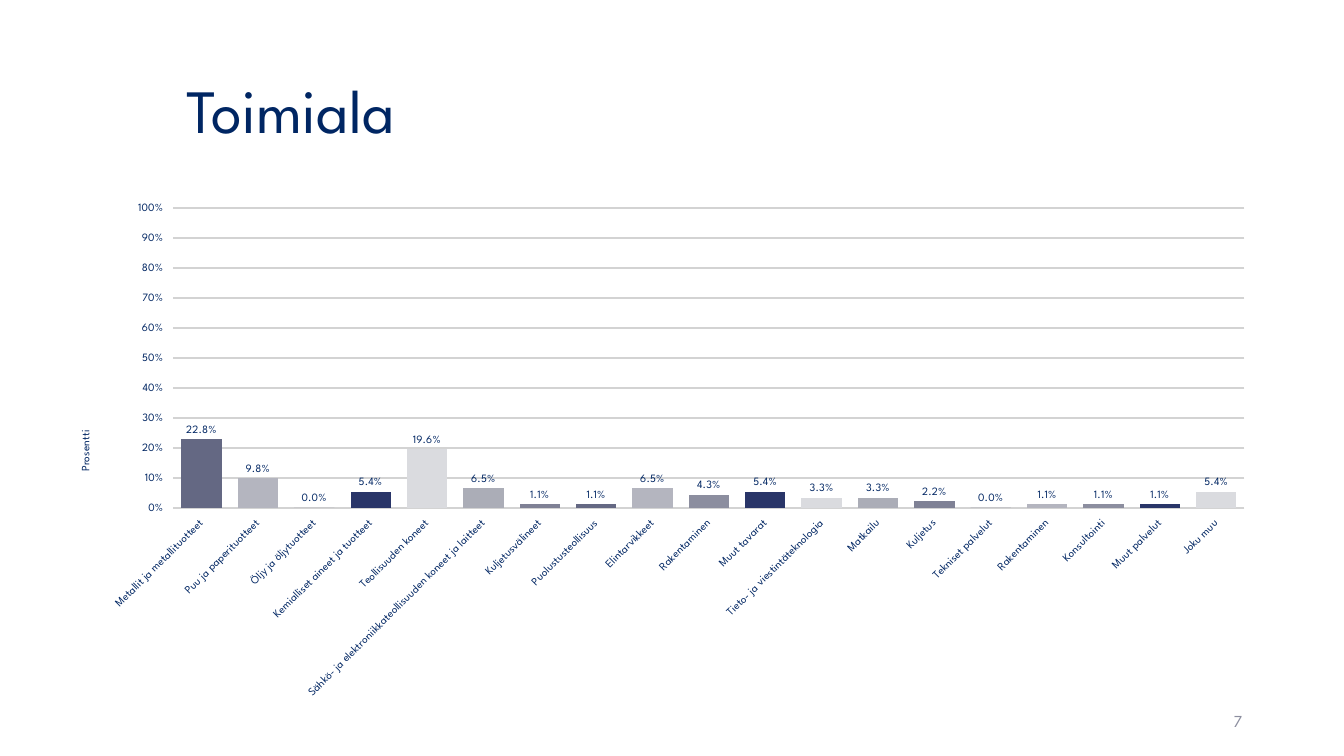
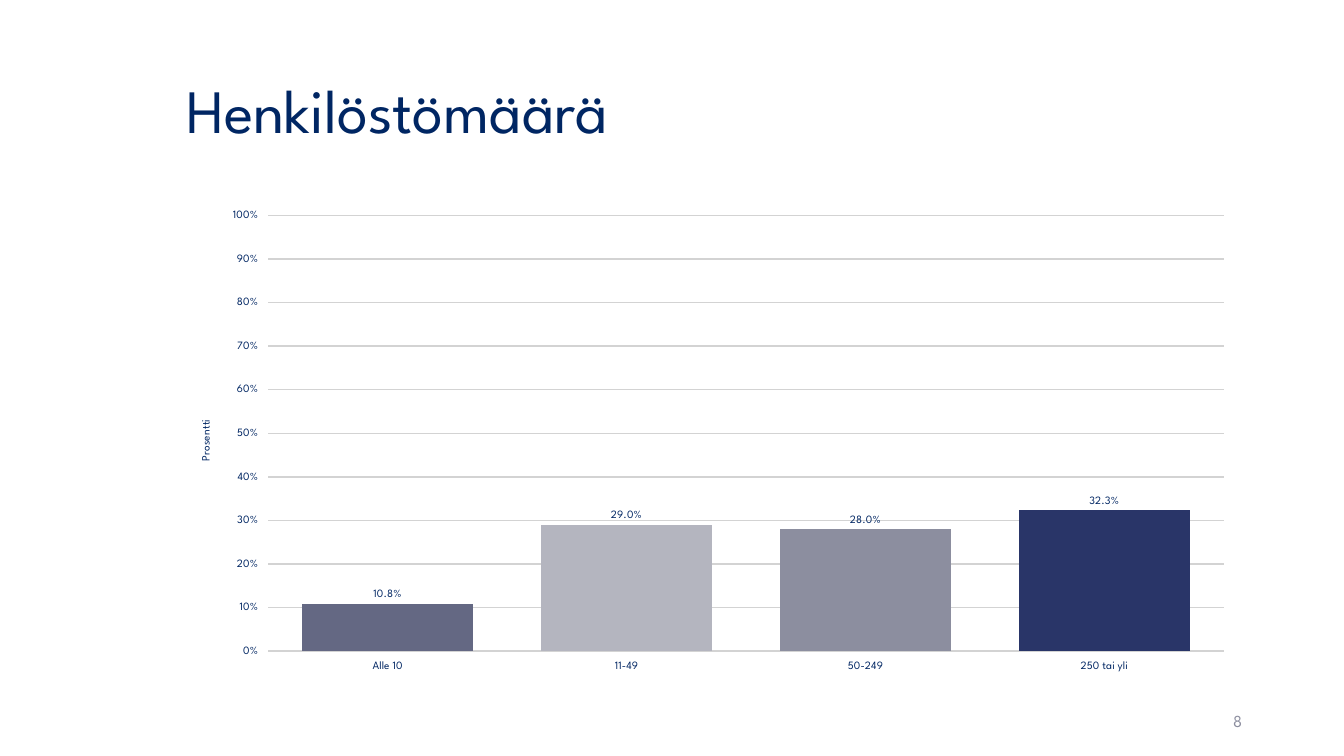
from lxml import etree
from pptx import Presentation
from pptx.chart.data import CategoryChartData
from pptx.dml.color import RGBColor
from pptx.enum.chart import XL_CHART_TYPE, XL_LABEL_POSITION, XL_TICK_MARK
from pptx.enum.text import MSO_ANCHOR, PP_ALIGN
from pptx.oxml.ns import qn
from pptx.util import Inches, Pt

COLUMNS = XL_CHART_TYPE.COLUMN_CLUSTERED
OUTSIDE_END = XL_LABEL_POSITION.OUTSIDE_END
TICK_OUT = XL_TICK_MARK.OUTSIDE
MIDDLE = MSO_ANCHOR.MIDDLE
LEFT, RIGHT = PP_ALIGN.LEFT, PP_ALIGN.RIGHT

FONT = "League Spartan"
NAVY, GREY, GRID = "002663", "8C8E9F", "D3D3D3"
BAR_COLORS = ["646883", "B4B5BF", "8C8E9F", "293568", "DADBDF", "ABADB7", "7F8195"]
TITLE_BOX = (1.75, 0.4, 10.59, 1.45)
NUMBER_BOX = (9.42, 6.95, 3, 0.4)

# Plot and axis title places are shares of the chart box
SLIDES = [
    dict(title="Toimiala", number="7", box=(0.77, 2, 11.58, 5.35),
         plot=dict(x=0.082, y=0.012, w=0.918, h=0.556),
         axis_title=dict(x=0, y=0.42), label_angle=-45,
         data=[("Metallit ja metallituotteet", 0.228),
               ("Puu ja paperituotteet", 0.098),
               ("Öljy ja öljytuotteet", 0),
               ("Kemialliset aineet ja tuotteet", 0.054),
               ("Teollisuuden koneet", 0.196),
               ("Sähkö- ja elektroniikkateollisuuden koneet ja laitteet", 0.065),
               ("Kuljetusvälineet", 0.011),
               ("Puolustusteollisuus", 0.011),
               ("Elintarvikkeet", 0.065),
               ("Rakentaminen", 0.043),
               ("Muut tavarat", 0.054),
               ("Tieto- ja viestintäteknologia", 0.033),
               ("Matkailu", 0.033),
               ("Kuljetus", 0.022),
               ("Tekniset palvelut", 0),
               ("Rakentaminen", 0.011),
               ("Konsultointi", 0.011),
               ("Muut palvelut", 0.011),
               ("Joku muu", 0.054)]),
    dict(title="Henkilöstömäärä", number="8", box=(1.75, 2, 10.59, 4.76),
         plot=dict(x=0.086, y=0.029, w=0.895, h=0.908),
         axis_title=dict(x=0.02, y=0.45), label_angle=0,
         data=[("Alle 10", 0.108), ("11-49", 0.29),
               ("50-249", 0.28), ("250 tai yli", 0.323)]),
]


def rgb(color):
    return RGBColor.from_string(color)


def set_attrs(obj, **values):
    for name, value in values.items():
        setattr(obj, name, value)


def set_font(font, size, color=NAVY):
    set_attrs(font, name=FONT, size=Pt(size), bold=False)
    font.color.rgb = rgb(color)


def set_box(sp, box):
    for name, value in zip(("left", "top", "width", "height"), box):
        setattr(sp, name, Inches(value))


def set_text(sp, text, size, color, align):
    tf = sp.text_frame
    set_attrs(tf, text=text, word_wrap=True, vertical_anchor=MIDDLE)
    p = tf.paragraphs[0]
    p.alignment = align
    set_font(p.runs[0].font, size, color)
    return p


def set_layout(parent, index, inner=False, **shares):
    """Give a chart part a manual place, in shares of the chart box."""
    for old in parent.findall(qn("c:layout")):
        parent.remove(old)
    layout = etree.Element(qn("c:layout"))
    manual = etree.SubElement(layout, qn("c:manualLayout"))
    values = {"layoutTarget": "inner"} if inner else {}
    values.update(xMode="edge", yMode="edge", **shares)
    for name, value in values.items():
        etree.SubElement(manual, qn("c:" + name)).set("val", str(value))
    parent.insert(index, layout)


def add_title(s, text):
    sp = s.shapes.title
    set_box(sp, TITLE_BOX)
    set_text(sp, text, 44, NAVY, LEFT).line_spacing = 0.9


def add_number(s, text):
    sp = s.shapes.add_textbox(*map(Inches, NUMBER_BOX))
    set_text(sp, text, 12, GREY, RIGHT)


def format_axes(chart, axis_title, label_angle):
    value_axis, category_axis = chart.value_axis, chart.category_axis
    for axis in (value_axis, category_axis):
        set_font(axis.tick_labels.font, 8)
        axis.major_tick_mark = TICK_OUT
        axis.format.line.fill.background()
    set_attrs(value_axis, minimum_scale=0, maximum_scale=1, major_unit=0.1,
              has_major_gridlines=True)
    set_attrs(value_axis.tick_labels, number_format="0%",
              number_format_is_linked=False)
    grid = value_axis.major_gridlines.format.line
    grid.width = Pt(1)
    grid.color.rgb = rgb(GRID)

    # Axis title, read upwards
    tf = value_axis.axis_title.text_frame
    tf.text = "Prosentti"
    set_font(tf.paragraphs[0].runs[0].font, 8)
    title = chart.element.xpath(".//c:valAx/c:title")[0]
    title.find(".//" + qn("a:bodyPr")).set("rot", str(-90 * 60000))
    set_layout(title, 1, **axis_title)

    # Slanted category labels
    body = chart.element.xpath(".//c:catAx/c:txPr/a:bodyPr")[0]
    body.set("rot", str(label_angle * 60000))


def add_column_chart(s, box, data, plot, axis_title, label_angle):
    names, values = zip(*data)
    chart_data = CategoryChartData(number_format="0.0%")
    chart_data.categories = names
    chart_data.add_series("Series 1", values)
    chart = s.shapes.add_chart(COLUMNS, *map(Inches, box), chart_data).chart
    set_attrs(chart, has_legend=False, has_title=False)
    set_font(chart.font, 18)
    format_axes(chart, axis_title, label_angle)
    set_layout(chart.element.xpath(".//c:plotArea")[0], 0, inner=True, **plot)

    # Columns and their labels
    columns = chart.plots[0]
    set_attrs(columns, gap_width=40, overlap=-2, vary_by_categories=False,
              has_data_labels=True)
    labels = columns.data_labels
    set_attrs(labels, show_value=True, number_format="0.0%",
              number_format_is_linked=False, position=OUTSIDE_END)
    set_font(labels.font, 8)
    series = columns.series[0]
    for i in range(len(values)):
        fill = series.points[i].format.fill
        fill.solid()
        fill.fore_color.rgb = rgb(BAR_COLORS[i % len(BAR_COLORS)])


def add_chart_slide(prs, title, number, **chart):
    s = prs.slides.add_slide(prs.slide_layouts[5])
    add_title(s, title)
    add_number(s, number)
    add_column_chart(s, **chart)


def main():
    prs = Presentation()
    set_attrs(prs, slide_width=Inches(13.33), slide_height=Inches(7.5))
    for content in SLIDES:
        add_chart_slide(prs, **content)
    prs.save("out.pptx")


if __name__ == "__main__":
    main()
